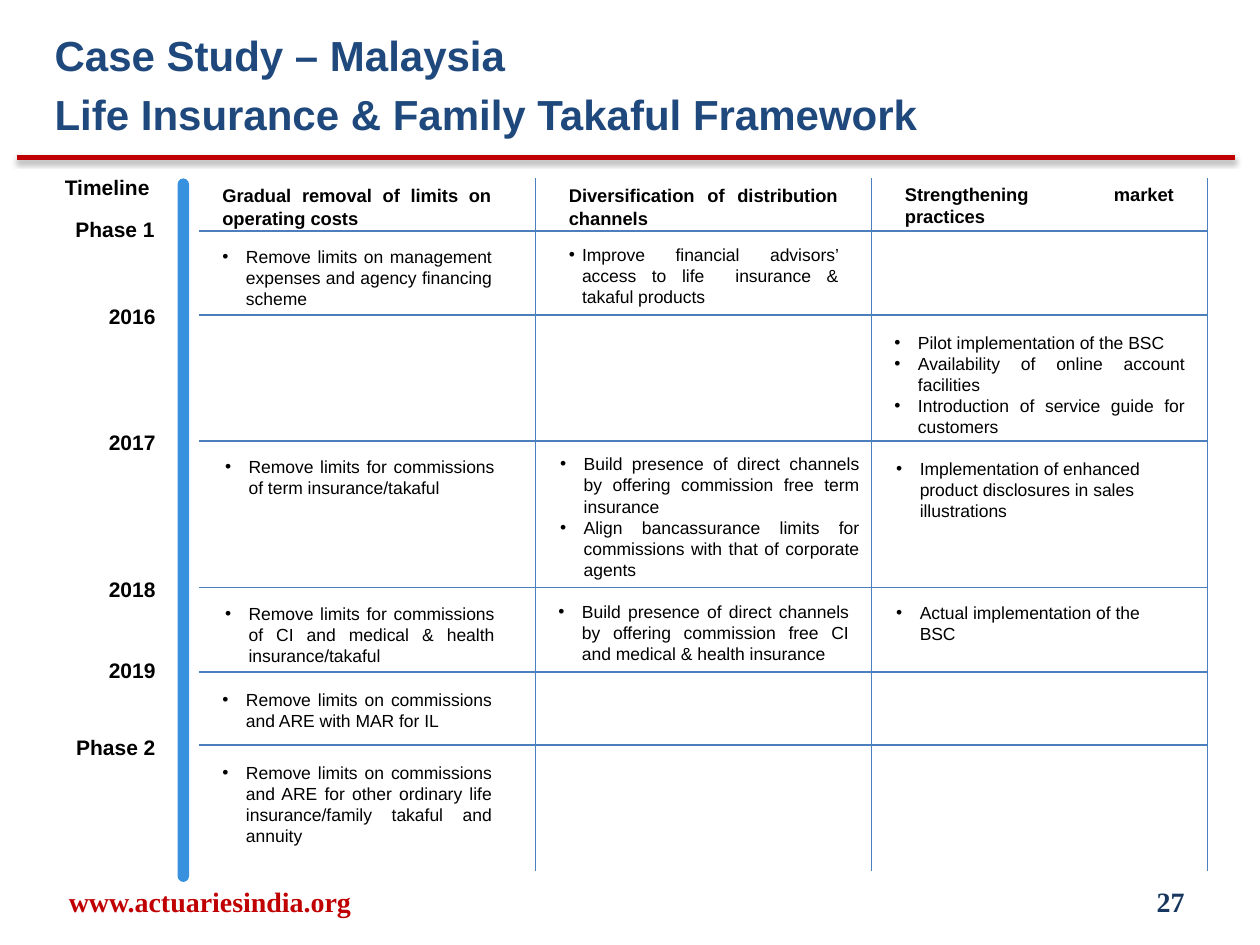
from lxml.etree import SubElement
from pptx import Presentation
from pptx.dml.color import RGBColor
from pptx.enum.shapes import MSO_CONNECTOR, MSO_SHAPE
from pptx.enum.text import MSO_ANCHOR, MSO_AUTO_SIZE, PP_ALIGN
from pptx.oxml.ns import qn
from pptx.util import Pt

LEFT, RIGHT = PP_ALIGN.LEFT, PP_ALIGN.RIGHT
CENTER, JUST = PP_ALIGN.CENTER, PP_ALIGN.JUSTIFY
BLACK, RED, BLUE, NAVY = "000000", "C00000", "4B7EBC", "17375E"

TITLE = ["Case Study – Malaysia", "Life Insurance & Family Takaful Framework"]

# text, left, top, alignment
LABELS = [
    ("Timeline", 30, 96, LEFT),
    ("Phase 1", 36, 120, LEFT),
    ("2016", 30, 170, RIGHT),
    ("2017", 30, 242, RIGHT),
    ("2018", 30, 326, RIGHT),
    ("2019", 30, 372, RIGHT),
    ("Phase 2", 30, 416, RIGHT),
]

# text, left, top
HEADS = [
    ("Gradual removal of limits on operating costs", 120, 102),
    ("Diversification of distribution channels", 318, 102),
    ("Strengthening market practices", 510, 101),
]

# left, top, width, line count, alignment, indent, bullets
CELLS = [
    (120, 136.8, 168, 3, JUST, 13.5,
     ["Remove limits on management expenses and agency financing scheme"]),
    (318, 136, 168, 3, JUST, 7.5,
     ["Improve financial advisors’ access to life  insurance & takaful products"]),
    (504, 186, 180, 5, JUST, 13.5,
     ["Pilot implementation of the BSC",
      "Availability of online account facilities",
      "Introduction of service guide for customers"]),
    (121.5, 257, 168, 2, JUST, 13.5,
     ["Remove limits for commissions of term insurance/takaful"]),
    (313, 255.6, 185, 6, JUST, 13.5,
     ["Build presence of direct channels by offering commission free term insurance",
      "Align bancassurance limits for commissions with that of corporate agents"]),
    (505, 258, 168, 3, LEFT, 13.5,
     ["Implementation of enhanced product disclosures in sales illustrations"]),
    (121.5, 341, 168, 3, JUST, 13.5,
     ["Remove limits for commissions of CI and medical & health insurance/takaful"]),
    (312, 340, 180, 3, JUST, 13.5,
     ["Build presence of direct channels by offering commission free CI "
      "and medical & health insurance"]),
    (505, 340.5, 168, 2, LEFT, 13.5,
     ["Actual implementation of the BSC"]),
    (120, 390, 168, 2, JUST, 13.5,
     ["Remove limits on commissions and ARE with MAR for IL"]),
    (120, 432, 168, 4, JUST, 13.5,
     ["Remove limits on commissions and ARE for other ordinary life "
      "insurance/family takaful and annuity"]),
]

ROWS = [132, 180, 252, 335.8, 384, 425.8]
COLS = [306, 498, 690]


def rgb(code):
    return RGBColor.from_string(code)


def style(para, size, color=BLACK, bold=True, font="Arial"):
    for run in para.runs:
        run.font.name, run.font.size, run.font.bold = font, Pt(size), bold
        run.font.color.rgb = rgb(color)


def place(shape, left, top, width, height):
    shape.left, shape.top = Pt(left), Pt(top)
    shape.width, shape.height = Pt(width), Pt(height)


def add_box(left, top, width, height, lines, align):
    box = slide.shapes.add_textbox(Pt(left), Pt(top), Pt(width), Pt(height))
    frame = box.text_frame
    frame.word_wrap = True
    frame.text = "\n".join(lines)
    for para in frame.paragraphs:
        para.alignment = align
    return frame


def add_bullet(para, indent):
    props = para._p.get_or_add_pPr()
    props.set("marL", str(Pt(indent)))
    props.set("indent", str(-Pt(indent)))
    SubElement(props, qn("a:buFont"), typeface="Arial")
    SubElement(props, qn("a:buChar"), char="•")


def add_line(x1, y1, x2, y2, color, width):
    """Draw a straight line and return its empty effect list."""
    line = slide.shapes.add_connector(
        MSO_CONNECTOR.STRAIGHT, Pt(x1), Pt(y1), Pt(x2), Pt(y2))
    line.line.color.rgb = rgb(color)
    line.line.width = Pt(width)
    return SubElement(line._element.spPr, qn("a:effectLst"))


deck = Presentation()
deck.slide_width, deck.slide_height = Pt(720), Pt(540)
slide = deck.slides.add_slide(deck.slide_layouts[5])

# Title and its red rule
title = slide.shapes.title
place(title, 24, 13, 594, 48)
frame = title.text_frame
frame.text = "\n".join(TITLE)
frame.auto_size = MSO_AUTO_SIZE.NONE
frame.vertical_anchor = MSO_ANCHOR.TOP
for para in frame.paragraphs:
    para.alignment = LEFT
    style(para, 24, "1F497D")
frame.paragraphs[1].space_before = Pt(5)

effects = add_line(9.5, 90, 705.5, 90, RED, 3)
shadow = SubElement(effects, qn("a:outerShdw"), blurRad=str(Pt(3.1)),
                    dist=str(Pt(1.6)), dir="5400000", rotWithShape="0")
black = SubElement(shadow, qn("a:srgbClr"), val=BLACK)
SubElement(black, qn("a:alpha"), val="38000")

# Timeline bar and grid
bar = slide.shapes.add_shape(
    MSO_SHAPE.ROUND_2_SAME_RECTANGLE, Pt(101.5), Pt(102), Pt(6.5), Pt(402))
bar.adjustments[0] = bar.adjustments[1] = 0.5
bar.shadow.inherit = False
bar.fill.solid()
bar.fill.fore_color.rgb = rgb("3891DE")
bar.line.fill.background()

for x in COLS:
    add_line(x, 102, x, 498, BLUE, 0.75)
for y in ROWS:
    add_line(114, y, COLS[-1], y, BLUE, 0.75)

# Table text
for text, left, top, align in LABELS:
    style(add_box(left, top, 66, 21.6, [text], align).paragraphs[0], 12)
for text, left, top in HEADS:
    style(add_box(left, top, 168, 33, [text], JUST).paragraphs[0], 10.5)
for left, top, width, count, align, indent, items in CELLS:
    frame = add_box(left, top, width, 12 * count + 7.2, items, align)
    for para in frame.paragraphs:
        add_bullet(para, indent)
        style(para, 10, bold=False)

# Footer
for text, left, width, align, color in [
        ("www.actuariesindia.org", 6, 228, CENTER, RED),
        ("27", 516, 168, RIGHT, NAVY)]:
    frame = add_box(left, 500.5, width, 28.8, [text], align)
    frame.vertical_anchor = MSO_ANCHOR.MIDDLE
    style(frame.paragraphs[0], 16, color, font="Times New Roman")

deck.save("out.pptx")
